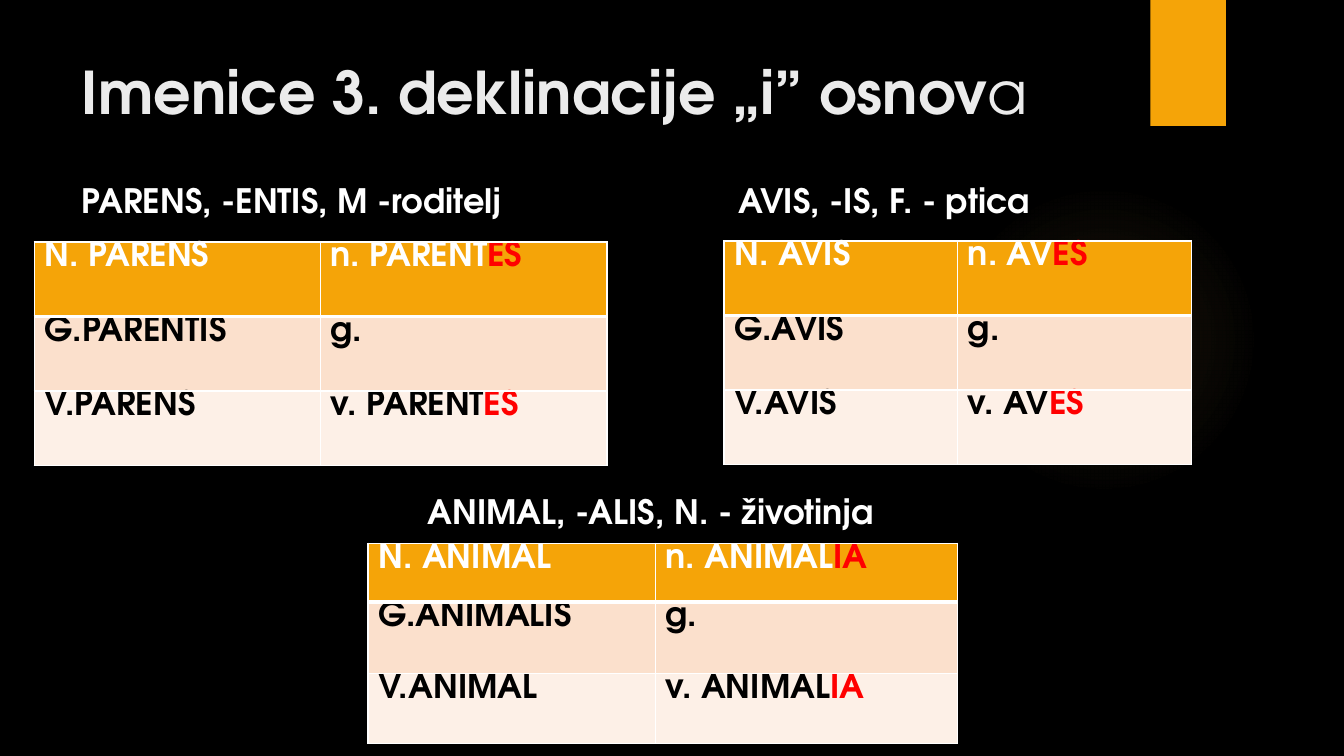
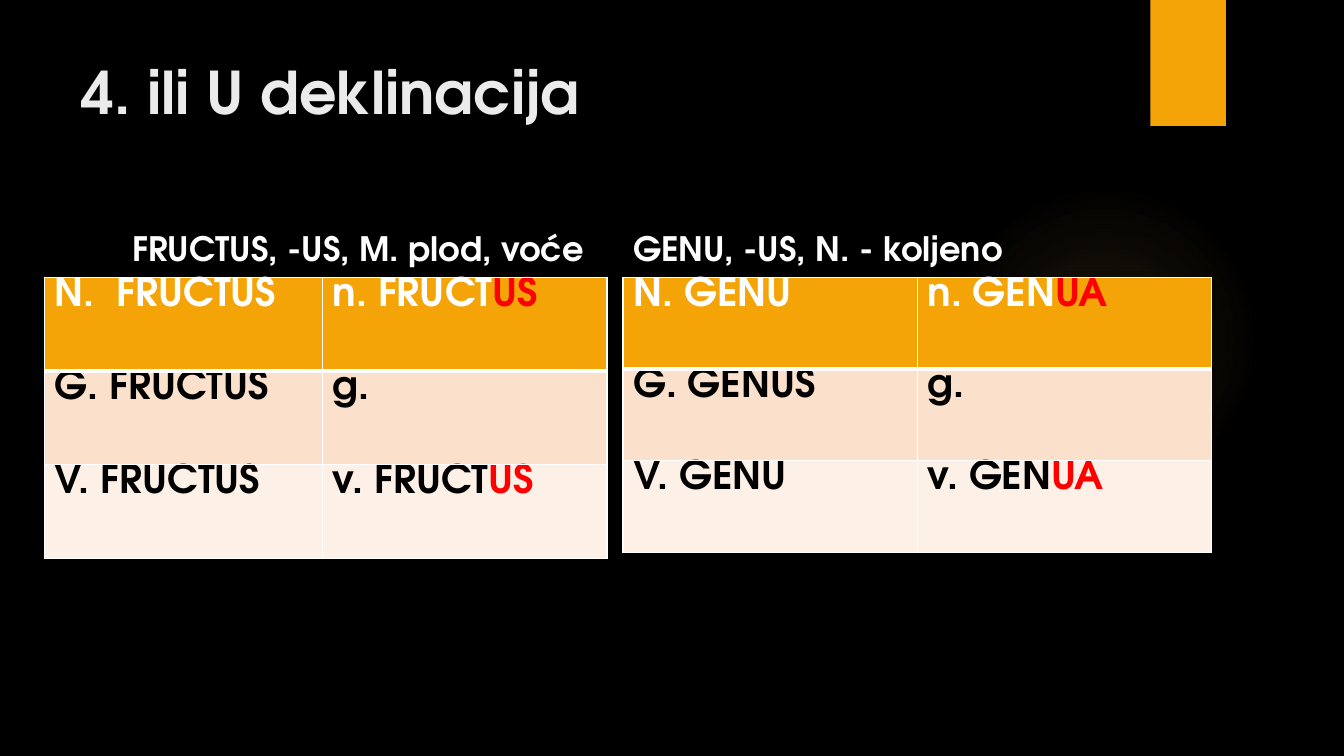
from pptx import Presentation
from pptx.dml.color import RGBColor
from pptx.enum import shapes, text
from pptx.oxml import parse_xml
from pptx.oxml.ns import nsdecls
from pptx.util import Inches, Pt

FONT = "TeX Gyre Adventor"
BLACK, WHITE, TITLE_GREY = "000000", "FFFFFF", "EBEBEB"
ORANGE, GLOW, ENDING_RED = "F5A408", "FAC96A", "FF0000"
ROW_FILLS = [ORANGE, "FBE0CC", "FDF0E7"]
ROW_INKS = [WHITE, BLACK, BLACK]
HEADING_WIDTH, HEADING_HEIGHT = 4.81, 0.63


def rgb(color):
    return RGBColor.from_string(color)


def style_paragraph(paragraph, size, color, bold=True):
    paragraph.alignment = text.PP_ALIGN.LEFT
    paragraph.space_before = Pt(0)
    font = paragraph.font
    font.name, font.size, font.bold = FONT, Pt(size), bold
    font.color.rgb = rgb(color)


def place(shape, left, top, width, height):
    shape.left, shape.top = Inches(left), Inches(top)
    shape.width, shape.height = Inches(width), Inches(height)


def set_background(master):
    master.background.fill.solid()
    master.background.fill.fore_color.rgb = rgb(BLACK)


def fill_with_glow(shape):
    """Fill the shape with a faint radial gradient that fades outwards."""
    stops = "".join(
        f'<a:gs pos="{pos}000"><a:srgbClr val="{GLOW}">'
        f'<a:alpha val="{alpha}000"/></a:srgbClr></a:gs>'
        for pos, alpha in [(0, 7), (36, 6), (69, 0)])
    gradient = parse_xml(
        f'<a:gradFill {nsdecls("a")} rotWithShape="1"><a:gsLst>{stops}</a:gsLst>'
        '<a:path path="circle"><a:fillToRect l="50000" t="50000" '
        'r="50000" b="50000"/></a:path></a:gradFill>')
    shape.fill.background()
    properties = shape.element.spPr
    properties.replace(properties.find("{*}noFill"), gradient)


def add_decoration(slide, layout):
    """Draw the glow and the band, then move them to the shared layout."""
    glow = slide.shapes.add_shape(
        shapes.MSO_SHAPE.OVAL, *map(Inches, (9.41, 1.83, 3.08, 3.08)))
    fill_with_glow(glow)
    band = slide.shapes.add_shape(
        shapes.MSO_SHAPE.RECTANGLE, *map(Inches, (11.41, 0, 0.75, 1.25)))
    band.fill.solid()
    band.fill.fore_color.rgb = rgb(ORANGE)
    for position, part in enumerate((glow, band)):
        part.line.fill.background()
        part.shadow.inherit = False
        part.element.nvSpPr.cNvPr.set("id", str(101 + position))
        layout.shapes.element.insert(2 + position, part.element)


def set_title(slide, wording, light_ending=""):
    title = slide.shapes.title
    place(title, 0.71, 0.5, 10.29, 1.53)
    frame = title.text_frame
    frame.auto_size = text.MSO_AUTO_SIZE.NONE
    frame.vertical_anchor = text.MSO_ANCHOR.TOP
    paragraph = frame.paragraphs[0]
    style_paragraph(paragraph, 42, TITLE_GREY)
    paragraph.add_run().text = wording
    if light_ending:
        ending = paragraph.add_run()
        ending.text = light_ending
        ending.font.bold = False


def set_heading(box, wording, left, top, width=HEADING_WIDTH, height=HEADING_HEIGHT):
    place(box, left, top, width, height)
    frame = box.text_frame
    frame.word_wrap = True
    frame.auto_size = text.MSO_AUTO_SIZE.NONE
    frame.vertical_anchor = text.MSO_ANCHOR.BOTTOM
    frame.text = wording
    style_paragraph(frame.paragraphs[0], 24, WHITE)


def set_borders(cell, top, bottom):
    widths = {"L": 1, "R": 1, "T": top, "B": bottom}
    for position, (side, width) in enumerate(widths.items()):
        cell._tc.get_or_add_tcPr().insert(position, parse_xml(
            f'<a:ln{side} {nsdecls("a")} w="{Pt(width)}"><a:solidFill>'
            f'<a:srgbClr val="{WHITE}"/></a:solidFill></a:ln{side}>'))


def fill_cell(cell, form, row, size):
    """Write a form; whatever follows its bar is the red case ending."""
    cell.fill.solid()
    cell.fill.fore_color.rgb = rgb(ROW_FILLS[row])
    set_borders(cell, top=3 if row == 1 else 1, bottom=3 if row == 0 else 1)
    cell.margin_top = cell.margin_bottom = 0
    paragraph = cell.text_frame.paragraphs[0]
    style_paragraph(paragraph, size, ROW_INKS[row])
    stem, _, ending = form.partition("|")
    paragraph.add_run().text = stem
    if ending:
        run = paragraph.add_run()
        run.text = ending
        run.font.color.rgb = rgb(ENDING_RED)


def add_declension(slide, left, top, columns, rows, forms, size):
    frame = slide.shapes.add_table(
        len(rows), len(columns), Inches(left), Inches(top),
        Inches(sum(columns)), Inches(sum(rows)))
    table = frame.table
    table.horz_banding = False
    for column, width in zip(table.columns, columns):
        column.width = Inches(width)
    for row, height in enumerate(rows):
        table.rows[row].height = Inches(height)
        for column, form in enumerate(forms[row]):
            fill_cell(table.cell(row, column), form, row, size)


def add_comparison(prs, layout, title, light_ending=""):
    """Add a titled slide; return it with its two heading placeholders."""
    slide = prs.slides.add_slide(layout)
    set_title(slide, title, light_ending)
    left_heading, left_body, right_heading, right_body = list(slide.placeholders)[1:]
    for unused in (left_body, right_body):
        unused.element.getparent().remove(unused.element)
    return slide, left_heading, right_heading


def add_third_declension(prs, layout):
    slide, parens, avis = add_comparison(
        prs, layout, "Imenice 3. deklinacije „i” osnov", "a")
    set_heading(parens, "PARENS, -ENTIS, M -roditelj", 0.71, 1.61)
    add_declension(slide, 0.34, 2.4, [2.84] * 2, [0.74] * 3, [
        ("N. PARENS", "n. PARENT|ES"),
        ("G.PARENTIS", "g."),
        ("V.PARENS", "v. PARENT|ES")], 24)
    set_heading(avis, "AVIS, -IS, F. - ptica", 7.22, 1.61)
    add_declension(slide, 7.18, 2.39, [2.32] * 2, [0.74] * 3, [
        ("N. AVIS", "n. AV|ES"),
        ("G.AVIS", "g."),
        ("V.AVIS", "v. AV|ES")], 24)
    animal = slide.shapes.add_textbox(0, 0, 0, 0)
    set_heading(animal, "ANIMAL, -ALIS, N. - životinja", 4.14, 4.77, 4.72, 0.55)
    add_declension(slide, 3.65, 5.39, [2.85, 3], [0.58, 0.71, 0.7], [
        ("N. ANIMAL", "n. ANIMAL|IA"),
        ("G.ANIMALIS", "g."),
        ("V.ANIMAL", "v. ANIMAL|IA")], 24)
    return slide


def add_fourth_declension(prs, layout):
    slide, fructus, genu = add_comparison(prs, layout, "4. ili U deklinacija")
    set_heading(fructus, "FRUCTUS, -US, M. plod, voće", 1.21, 2.08)
    add_declension(slide, 0.44, 2.75, [2.76, 2.82], [0.93] * 3, [
        ("N.  FRUCTUS", "n. FRUCT|US"),
        ("G. FRUCTUS", "g."),
        ("V. FRUCTUS", "v. FRUCT|US")], 28)
    set_heading(genu, "GENU, -US, N. - koljeno", 6.18, 2.08)
    add_declension(slide, 6.18, 2.75, [2.92] * 2, [0.91] * 3, [
        ("N. GENU", "n. GEN|UA"),
        ("G. GENUS", "g."),
        ("V. GENU", "v. GEN|UA")], 28)


def main():
    prs = Presentation()
    prs.slide_width, prs.slide_height = Inches(13.33), Inches(7.5)
    set_background(prs.slide_master)
    layout = prs.slide_layouts.get_by_name("Comparison")
    first_slide = add_third_declension(prs, layout)
    add_decoration(first_slide, layout)
    add_fourth_declension(prs, layout)
    prs.save("out.pptx")


if __name__ == "__main__":
    main()
